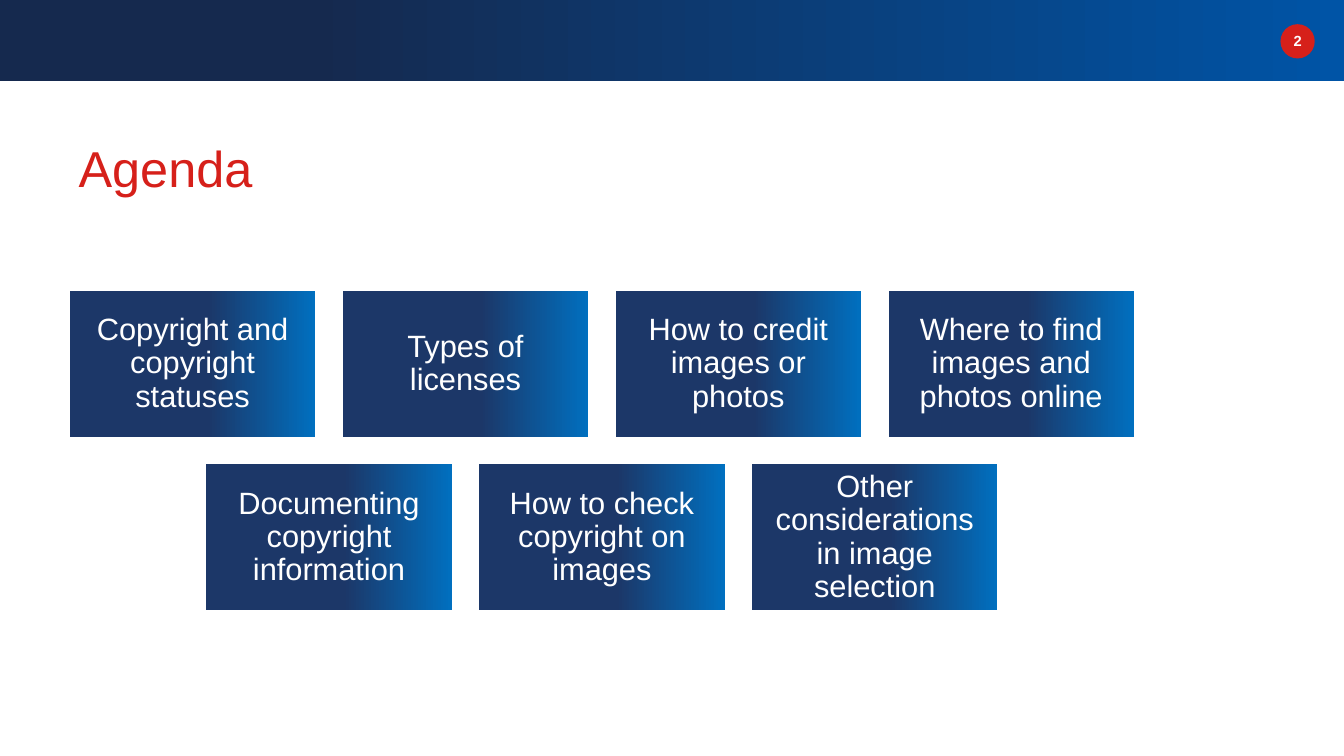
from pptx import Presentation
from pptx import util as u
from pptx.dml.color import RGBColor
from pptx.enum import shapes, text

WHITE = RGBColor(0xFF, 0xFF, 0xFF)
RED = RGBColor(0xD6, 0x20, 0x1A)
BAND_NAVY = RGBColor(0x15, 0x29, 0x4E)
BAND_BLUE = RGBColor(0x00, 0x54, 0xA6)
CARD_NAVY = RGBColor(0x1C, 0x37, 0x68)
CARD_BLUE = RGBColor(0x00, 0x70, 0xC0)
FONT = "Arial"
TOPIC_ROWS = [
    [
        "Copyright and copyright statuses",
        "Types of licenses",
        "How to credit images or photos",
        "Where to find images and photos online",
    ],
    [
        "Documenting copyright information",
        "How to check copyright on images",
        "Other considerations in image selection",
    ],
]


def add_panel(page, kind, left, top, width, height):
    """Add a flat preset shape without outline or shadow."""
    panel = page.shapes.add_shape(
        kind, u.Inches(left), u.Inches(top), u.Inches(width), u.Inches(height)
    )
    panel.shadow.inherit = False
    panel.line.fill.background()
    return panel


def fill_gradient(panel, right_color, left_color, end):
    """Fade from the right edge colour to the left colour at the given share."""
    panel.fill.gradient()
    panel.fill.gradient_angle = 180
    stops = panel.fill.gradient_stops
    for stop, color, position in zip(stops, (right_color, left_color), (0, end)):
        stop.color.rgb = color
        stop.position = position


def write(box, words, size, color, align, bold=False):
    """Write one formatted paragraph into a shape."""
    frame = box.text_frame
    frame.word_wrap = True
    para = frame.paragraphs[0]
    para.alignment = align
    span = para.add_run()
    span.text = words
    span.font.name = FONT
    span.font.size = u.Pt(size)
    span.font.bold = bold
    span.font.color.rgb = color
    return para


def add_header(page, left, top, width, height):
    """Draw the top band with its page number badge."""
    band = add_panel(page, shapes.MSO_SHAPE.RECTANGLE, left, top, width, height)
    fill_gradient(band, BAND_BLUE, BAND_NAVY, 0.77)
    badge_left = left + width - 0.63
    badge = add_panel(page, shapes.MSO_SHAPE.OVAL, badge_left, top + 0.24, 0.34, 0.34)
    badge.fill.solid()
    badge.fill.fore_color.rgb = RED
    number = page.shapes.add_textbox(
        u.Inches(badge_left - 0.05), u.Inches(top + 0.27), u.Inches(0.44), u.Inches(0.28)
    )
    write(number, "2", 10.5, WHITE, text.PP_ALIGN.CENTER, bold=True)


def add_title(page, left, top, width, height):
    """Place the slide title in its placeholder."""
    title = page.shapes.title
    title.left, title.top = u.Inches(left), u.Inches(top)
    title.width, title.height = u.Inches(width), u.Inches(height)
    title.text_frame.auto_size = text.MSO_AUTO_SIZE.NONE
    title.text_frame.vertical_anchor = text.MSO_ANCHOR.MIDDLE
    write(title, "Agenda", 36, RED, text.PP_ALIGN.LEFT)


def add_card(page, topic, left, top, width, height):
    """Draw one agenda topic card."""
    card = add_panel(page, shapes.MSO_SHAPE.RECTANGLE, left, top, width, height)
    fill_gradient(card, CARD_BLUE, CARD_NAVY, 0.44)
    card.line.color.rgb = WHITE
    card.line.width = u.Pt(2)
    frame = card.text_frame
    frame.margin_left = frame.margin_right = u.Inches(0.09)
    frame.margin_top = frame.margin_bottom = u.Inches(0.09)
    frame.vertical_anchor = text.MSO_ANCHOR.MIDDLE
    para = write(card, topic, 22, WHITE, text.PP_ALIGN.CENTER)
    para.line_spacing = 0.9


def add_topics(page, left, top, width, height):
    """Lay out the topic cards in centred rows."""
    gap = 0.245
    columns = max(len(topics) for topics in TOPIC_ROWS)
    card_width = (width - gap * (columns - 1)) / columns
    card_height = (height - gap * (len(TOPIC_ROWS) - 1)) / len(TOPIC_ROWS)
    for row, topics in enumerate(TOPIC_ROWS):
        row_left = left + (columns - len(topics)) * (card_width + gap) / 2
        for column, topic in enumerate(topics):
            add_card(
                page,
                topic,
                row_left + column * (card_width + gap),
                top + row * (card_height + gap),
                card_width,
                card_height,
            )


def main():
    """Build and save the agenda slide."""
    deck = Presentation()
    deck.slide_width, deck.slide_height = u.Inches(13.33), u.Inches(7.5)
    page = deck.slides.add_slide(deck.slide_layouts.get_by_name("Title Only"))
    add_header(page, 0, 0, 13.33, 0.8)
    add_title(page, 0.68, 1.31, 11.5, 0.71)
    add_topics(page, 0.68, 2.87, 10.58, 3.2)
    deck.save("out.pptx")


if __name__ == "__main__":
    main()
